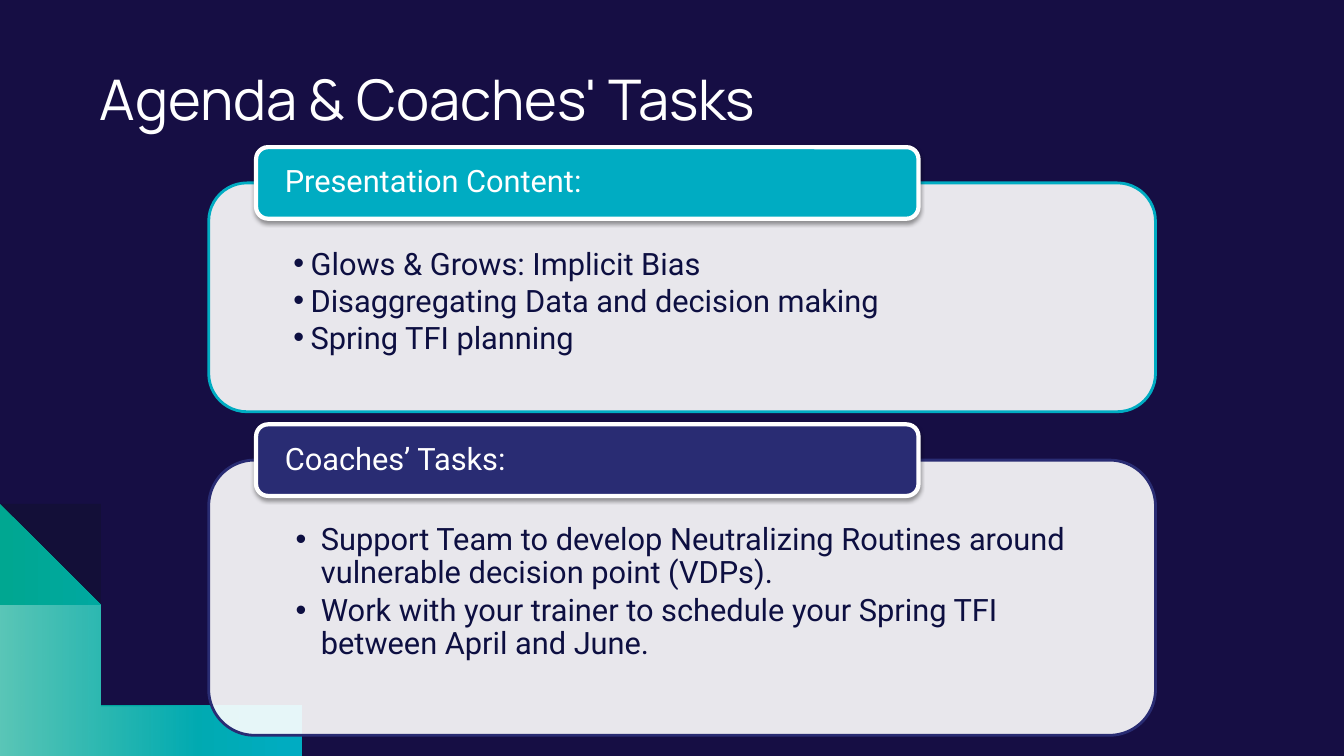
"""Build the agenda slide with two titled cards and a curved corner."""
import pptx
import pptx.util
import pptx.dml.color
import pptx.enum.shapes
import pptx.enum.text
import pptx.oxml.ns
import lxml.etree

Inches, Pt = pptx.util.Inches, pptx.util.Pt
qn = pptx.oxml.ns.qn
COLORS = {"night": "160E44", "shade": "12102F", "teal": "00ACC2", "green": "00A791",
          "indigo": "292C73", "ink": "0D0F41", "white": "FFFFFF", "black": "000000"}


def rgb(name):
    return pptx.dml.color.RGBColor.from_string(COLORS[name])


def add_text(paragraph, text, size, font, color):
    run = paragraph.add_run()
    run.text = text
    run.font.size = Pt(size)
    run.font.name = font
    run.font.color.rgb = rgb(color)


deck = pptx.Presentation()
deck.slide_width, deck.slide_height = Inches(13.33), Inches(7.5)
slide = deck.slides.add_slide(deck.slide_layouts[6])
slide.background.fill.solid()
slide.background.fill.fore_color.rgb = rgb("night")

BOTTOM = 7.5
STEPS = 40
waves = [
    ([(0, 4.13), (0.98, 7.39), (3.03, 7.5), (3.03, 7.5)], [("shade", 54)]),
    ([(0, 4.22), (0.95, 7.39), (2.95, 7.5), (2.95, 7.5)], [("green", 100), ("teal", 100)]),
    ([(0, 5.06), (0, 5.06), (0.91, 7.35), (2.16, 7.5)], [("white", 36), ("white", 0)]),
]
for controls, tints in waves:
    edge = []
    for step in range(STEPS + 1):
        t = step / STEPS
        weights = ((1 - t) ** 3, 3 * t * (1 - t) ** 2, 3 * t * t * (1 - t), t ** 3)
        edge.append(tuple(sum(w * point[axis] for w, point in zip(weights, controls))
                          for axis in (0, 1)))
    outline = slide.shapes.build_freeform(*edge[0], scale=Inches(1))
    outline.add_line_segments(edge[1:] + [(0, BOTTOM)], close=True)
    wave = outline.convert_to_shape()
    wave.shadow.inherit = False
    wave.line.fill.background()
    if len(tints) == 1:
        wave.fill.solid()
        tinted = [wave.fill.fore_color]
    else:
        wave.fill.gradient()
        wave.fill.gradient_angle = 0
        tinted = [stop.color for stop in wave.fill.gradient_stops]
    for color, (name, opacity) in zip(tinted, tints):
        color.rgb = rgb(name)
    for element, (name, opacity) in zip(wave.element.spPr.iter(qn("a:srgbClr")), tints):
        lxml.etree.SubElement(element, qn("a:alpha"), val=str(opacity * 1000))

CARD_LEFT, CARD_WIDTH = 2.07, 9.39
HEADER_LEFT, HEADER_WIDTH, HEADER_HEIGHT = 2.54, 6.57, 0.71
FIRST_TOP, CARD_PITCH = 1.46, 2.75
sections = [
    ("Presentation Content:", "teal", 2.27, 0.17, 1.0, 0,
     ["Glows & Grows: Implicit Bias", "Disaggregating Data and decision making",
      "Spring TFI planning"]),
    ("Coaches’ Tasks:", "indigo", 2.73, 0.25, 0.9, 3.3,
     ["Support Team to develop Neutralizing Routines around vulnerable decision point (VDPs).",
      "Work with your trainer to schedule your Spring TFI between April and June."]),
]
for index, (heading, accent, card_height, indent, leading, gap, items) in enumerate(sections):
    top = FIRST_TOP + index * CARD_PITCH
    card = slide.shapes.add_shape(
        pptx.enum.shapes.MSO_SHAPE.ROUNDED_RECTANGLE, Inches(CARD_LEFT),
        Inches(top + HEADER_HEIGHT / 2), Inches(CARD_WIDTH), Inches(card_height))
    header = slide.shapes.add_shape(
        pptx.enum.shapes.MSO_SHAPE.ROUNDED_RECTANGLE, Inches(HEADER_LEFT),
        Inches(top), Inches(HEADER_WIDTH), Inches(HEADER_HEIGHT))
    for panel, fill, border, width, insets, anchor in (
            (card, "white", accent, 2, (0.73, 0.5, 0.73, 0.17), "TOP"),
            (header, accent, "white", 3, (0.25, 0, 0.25, 0), "MIDDLE")):
        panel.shadow.inherit = False
        panel.fill.solid()
        panel.fill.fore_color.rgb = rgb(fill)
        panel.line.color.rgb = rgb(border)
        panel.line.width = Pt(width)
        frame = panel.text_frame
        frame.word_wrap = True
        frame.vertical_anchor = pptx.enum.text.MSO_ANCHOR[anchor]
        (frame.margin_left, frame.margin_top,
         frame.margin_right, frame.margin_bottom) = map(Inches, insets)

    card_color = card.element.spPr.find(qn("a:solidFill")).find(qn("a:srgbClr"))
    lxml.etree.SubElement(card_color, qn("a:alpha"), val="90000")
    shadow = lxml.etree.SubElement(
        header.element.spPr.find(qn("a:effectLst")), qn("a:outerShdw"),
        blurRad=str(Pt(3.1)), dist=str(Pt(1.6)), dir="5400000", rotWithShape="0")
    shadow_color = lxml.etree.SubElement(shadow, qn("a:srgbClr"), val=COLORS["black"])
    lxml.etree.SubElement(shadow_color, qn("a:alpha"), val="38000")

    heading_line = header.text_frame.paragraphs[0]
    heading_line.alignment = pptx.enum.text.PP_ALIGN.LEFT
    heading_line.line_spacing = 0.9
    add_text(heading_line, heading, 22, "Roboto", "white")

    for position, item in enumerate(items):
        body = card.text_frame
        bullet = body.add_paragraph() if position else body.paragraphs[0]
        bullet.alignment = pptx.enum.text.PP_ALIGN.LEFT
        bullet.line_spacing = leading
        bullet.space_after = Pt(gap)
        properties = bullet._p.get_or_add_pPr()
        properties.set("marL", str(Inches(indent)))
        properties.set("indent", str(-Inches(indent)))
        lxml.etree.SubElement(properties, qn("a:buFont"), typeface="Arial")
        lxml.etree.SubElement(properties, qn("a:buChar"), char="•")
        add_text(bullet, item, 22, "Roboto", "ink")

title = slide.shapes.add_textbox(Inches(0.89), Inches(0.51), Inches(10.26), Inches(0.92))
title_frame = title.text_frame
title_frame.word_wrap = True
title_frame.vertical_anchor = pptx.enum.text.MSO_ANCHOR.MIDDLE
title_frame.margin_left = title_frame.margin_right = Inches(0.1)
title_frame.margin_top = title_frame.margin_bottom = Inches(0.1)
add_text(title_frame.paragraphs[0], "Agenda & Coaches' Tasks", 40, "Manrope", "white")

deck.save("out.pptx")
